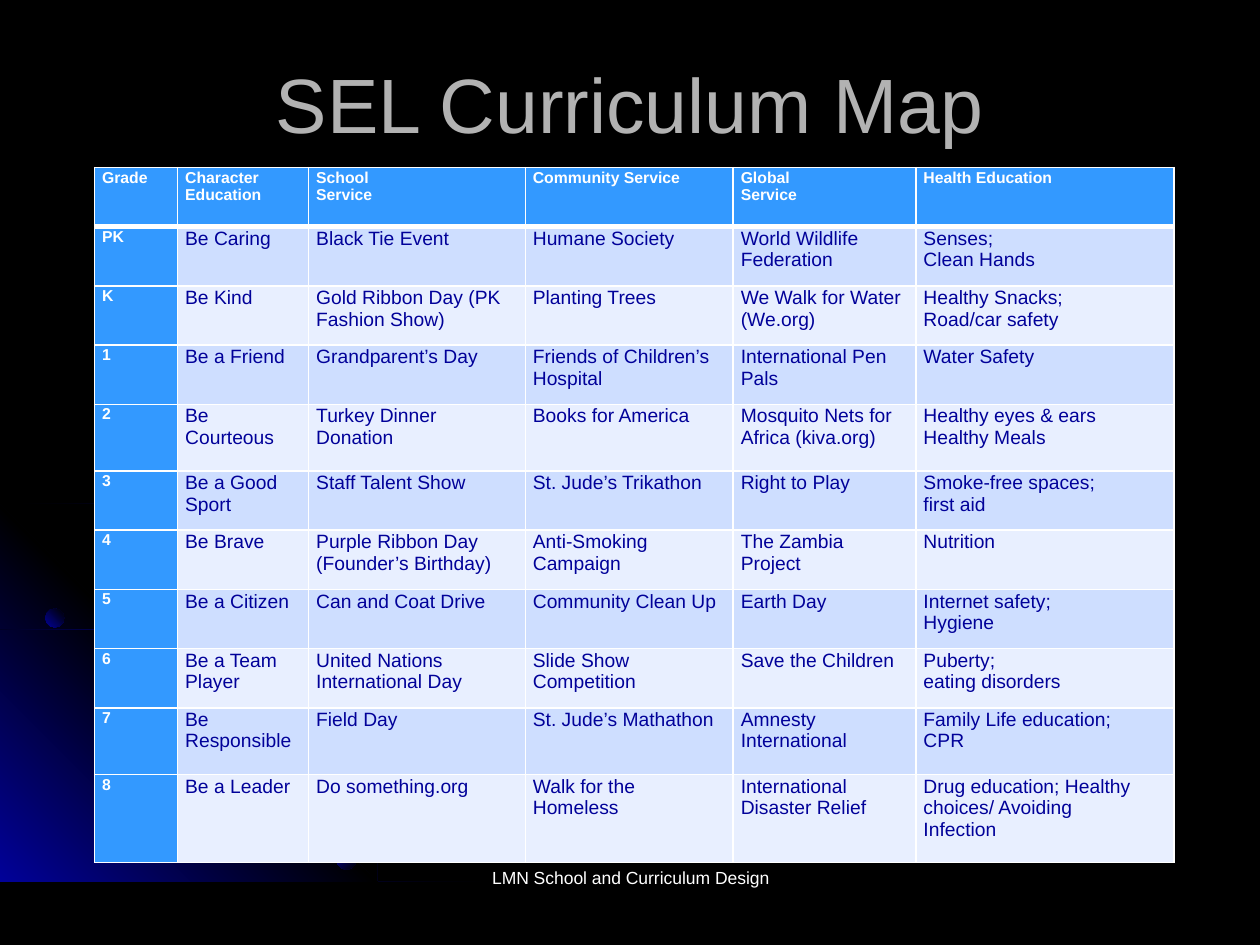
from lxml import etree
from pptx import Presentation
from pptx import util as u
from pptx.dml.color import RGBColor
from pptx.enum import shapes, text
from pptx.oxml import ns

BLACK = RGBColor(0, 0, 0)
WHITE = RGBColor(255, 255, 255)
GREY = RGBColor(0xB2, 0xB2, 0xB2)
NAVY = RGBColor(0x01, 0x01, 0x99)
AZURE = RGBColor(0x33, 0x99, 0xFF)
BANDS = RGBColor(0xE8, 0xEF, 0xFF), RGBColor(0xCE, 0xDE, 0xFF)
FONT = "Arial"
WIDE, HIGH = 10, 7.5
FLOOR = 7.49

COLS = [0.66, 1.04, 1.72, 1.65, 1.45, 2.05]
TALL = {4: 0.53, 9: 0.53, 10: 0.7}
ROW = 0.47
GRID = [
    ["Grade", "Character\nEducation", "School\nService", "Community Service",
     "Global\nService", "Health Education"],
    ["PK", "Be Caring", "Black Tie Event", "Humane Society",
     "World Wildlife Federation", "Senses;\nClean Hands"],
    ["K", "Be Kind", "Gold Ribbon Day (PK Fashion Show)", "Planting Trees",
     "We Walk for Water (We.org)", "Healthy Snacks;\nRoad/car safety"],
    ["1", "Be a Friend", "Grandparent’s Day", "Friends of Children’s Hospital",
     "International Pen Pals", "Water Safety"],
    ["2", "Be Courteous", "Turkey Dinner Donation", "Books for America",
     "Mosquito Nets for Africa (kiva.org)", "Healthy eyes & ears\nHealthy Meals"],
    ["3", "Be a Good Sport", "Staff Talent Show", "St. Jude’s Trikathon",
     "Right to Play", "Smoke-free spaces;\nfirst aid"],
    ["4", "Be Brave", "Purple Ribbon Day (Founder’s Birthday)",
     "Anti-Smoking Campaign", "The Zambia Project", "Nutrition"],
    ["5", "Be a Citizen", "Can and Coat Drive", "Community Clean Up",
     "Earth Day", "Internet safety;\nHygiene"],
    ["6", "Be a Team Player", "United Nations International Day",
     "Slide Show Competition", "Save the Children", "Puberty;\neating disorders"],
    ["7", "Be Responsible", "Field Day", "St. Jude’s Mathathon",
     "Amnesty International", "Family Life education; CPR"],
    ["8", "Be a Leader", "Do something.org", "Walk for the Homeless",
     "International Disaster Relief",
     "Drug education; Healthy choices/ Avoiding Infection"],
]

TOP_ARC = [
    (0, 4.35), (0.57, 4.47), (0.98, 4.59), (1.36, 4.77), (1.74, 4.97),
    (2.09, 5.21), (2.42, 5.48), (2.72, 5.78), (3, 6.11), (3.25, 6.48),
    (3.39, 6.73), (3.52, 6.98), (3.62, 7.23), (3.72, FLOOR)]
LOW_ARC = [
    (0, 4.75), (0.41, 4.88), (0.79, 5.05), (1.17, 5.26), (1.52, 5.49),
    (1.84, 5.76), (2.15, 6.06), (2.42, 6.4), (2.66, 6.76), (2.86, 7.12),
    (2.96, 7.3), (3.03, FLOOR)]
MID_ARC = [
    (0, 4.42), (0.39, 4.55), (0.76, 4.73), (1.11, 4.93), (1.44, 5.16),
    (1.75, 5.43), (2.04, 5.73), (2.29, 6.03), (2.54, 6.39), (2.69, 6.65),
    (2.82, 6.93), (2.94, 7.2), (3.03, FLOOR)]


def add_tag(node, tag, **attrs):
    return etree.SubElement(node, ns.qn(tag), attrs)


def blend(shape, tones, angle):
    shape.shadow.inherit = False
    shape.line.fill.background()
    shape.fill.gradient()
    grad = shape.fill._fill._gradFill
    for child in list(grad):
        grad.remove(child)
    stops = add_tag(grad, "a:gsLst")
    for i, tone in enumerate(tones):
        stop = add_tag(stops, "a:gs", pos=str(100000 * i // (len(tones) - 1)))
        add_tag(stop, "a:srgbClr", val=str(tone))
    add_tag(grad, "a:lin", ang=str(angle * 60000), scaled="1")


def add_area(slide, points, tones, angle):
    pen = slide.shapes.build_freeform(*points[0], scale=u.Inches(1))
    pen.add_line_segments(points[1:], close=True)
    blend(pen.convert_to_shape(), tones, angle)


def add_arc(slide, edge, gap):
    under = [(max(x - gap, 0), min(y + 0.02, FLOOR)) for x, y in edge]
    add_area(slide, edge + under[::-1], (BLACK, NAVY, BLACK), 45)


def add_dot(slide, left, top, size, angle):
    box = [u.Inches(n) for n in (left, top, size, size)]
    dot = slide.shapes.add_shape(shapes.MSO_SHAPE.OVAL, *box)
    blend(dot, (NAVY, BLACK), angle)


def set_font(para, size, tone, bold=False):
    font = para.font
    font.name, font.size, font.bold = FONT, u.Pt(size), bold
    font.color.rgb = tone


def add_label(slide, box, words, size, tone, anchor):
    frame = slide.shapes.add_textbox(*[u.Inches(n) for n in box]).text_frame
    frame.word_wrap = True
    frame.vertical_anchor = anchor
    para = frame.paragraphs[0]
    para.text = words
    para.alignment = text.PP_ALIGN.CENTER
    set_font(para, size, tone)


def rule_cell(cell, heavy):
    props = cell._tc.get_or_add_tcPr()
    for i, side in enumerate(("a:lnL", "a:lnR", "a:lnT", "a:lnB")):
        width = u.Pt(3 if side in heavy else 1)
        line = etree.Element(ns.qn(side), w=str(int(width)))
        fill = add_tag(line, "a:solidFill")
        add_tag(fill, "a:srgbClr", val=str(WHITE))
        props.insert(i, line)


def fill_cell(cell, words, row, col):
    head = row == 0 or col == 0
    cell.fill.solid()
    cell.fill.fore_color.rgb = AZURE if head else BANDS[row % 2]
    cell.margin_left = u.Inches(0.06)
    cell.margin_right = u.Inches(0.2 if col == len(COLS) - 1 else 0.06)
    cell.margin_top, cell.margin_bottom = u.Inches(0.01), 0
    cell.text = words
    for para in cell.text_frame.paragraphs:
        set_font(para, 9 if head else 11, WHITE if head else NAVY, head)
    rule_cell(cell, {0: ("a:lnB",), 1: ("a:lnT",)}.get(row, ()))


def add_map(slide, left, top):
    highs = [TALL.get(i, ROW) for i in range(len(GRID))]
    box = [u.Inches(n) for n in (left, top, sum(COLS), sum(highs))]
    table = slide.shapes.add_table(len(GRID), len(COLS), *box).table
    for col, width in zip(table.columns, COLS):
        col.width = u.Inches(width)
    for i, (high, line) in enumerate(zip(highs, GRID)):
        table.rows[i].height = u.Inches(high)
        for j, words in enumerate(line):
            fill_cell(table.cell(i, j), words, i, j)


def main():
    deck = Presentation()
    deck.slide_width, deck.slide_height = u.Inches(WIDE), u.Inches(HIGH)
    slide = deck.slides.add_slide(deck.slide_layouts[6])
    slide.background.fill.solid()
    slide.background.fill.fore_color.rgb = BLACK

    add_arc(slide, TOP_ARC, 0.01)
    corner = [(3.22, FLOOR), (0, FLOOR), (0, 4.27)]
    add_area(slide, corner, (NAVY, BLACK, NAVY), 315)
    add_arc(slide, LOW_ARC, 0.02)
    add_arc(slide, MID_ARC, 0.02)
    add_dot(slide, 0.36, 4.83, 0.15, 315)
    add_dot(slide, 2.67, 6.74, 0.16, 45)

    title = WIDE * 0.05, HIGH * 0.04, WIDE * 0.9, 1.03
    add_label(slide, title, "SEL Curriculum Map", 44, GREY, text.MSO_ANCHOR.MIDDLE)
    add_map(slide, 0.75, 1.33)
    foot = 3.42, 6.83, 3.17, 0.5
    add_label(slide, foot, "LMN School and Curriculum Design", 10, WHITE,
              text.MSO_ANCHOR.TOP)
    deck.save("out.pptx")


if __name__ == "__main__":
    main()
